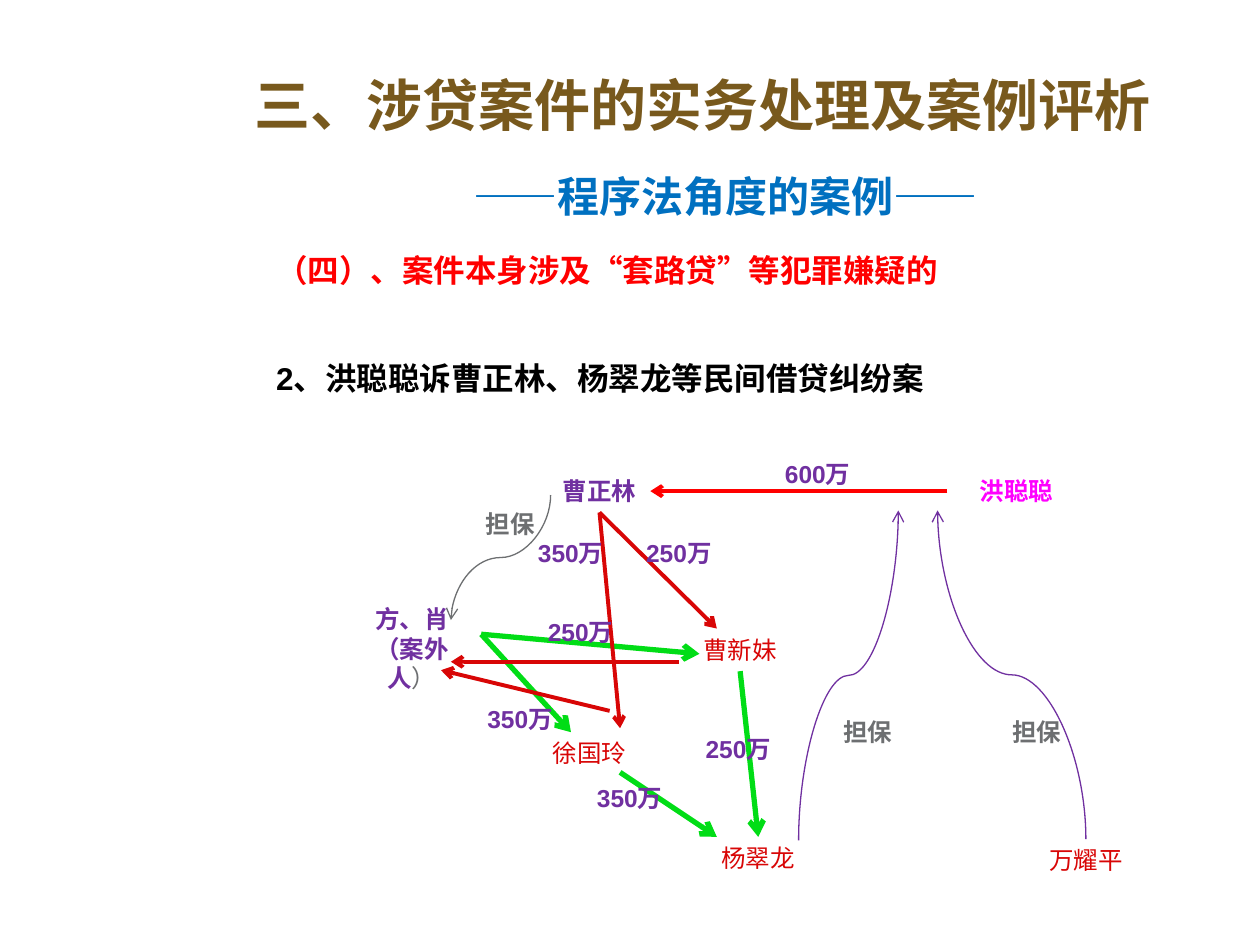
from collections import namedtuple

from lxml.etree import SubElement
from pptx import Presentation
from pptx.dml.color import RGBColor
from pptx.enum.shapes import MSO_CONNECTOR
from pptx.enum.text import MSO_ANCHOR, MSO_AUTO_SIZE, PP_ALIGN
from pptx.oxml.ns import qn
from pptx.util import Cm, Pt

BROWN = RGBColor(0x78, 0x59, 0x1D)
BLUE = RGBColor(0x00, 0x70, 0xC0)
RED = RGBColor(0xFF, 0x00, 0x00)
DARK_RED = RGBColor(0xD8, 0x06, 0x06)
BLACK = RGBColor(0x00, 0x00, 0x00)
PURPLE = RGBColor(0x70, 0x30, 0xA0)
MAGENTA = RGBColor(0xFF, 0x00, 0xFF)
GREEN = RGBColor(0x01, 0xDD, 0x16)
GREY = RGBColor(0x6D, 0x6F, 0x71)

TOP, LEFT, BOTTOM, RIGHT = range(4)
Site = namedtuple("Site", "party side")


class CaseSlide:
    font_name = "Arial"
    label_width, label_height = 2.79, 0.86

    def __init__(self, presentation):
        self.slide = presentation.slides.add_slide(presentation.slide_layouts[1])

    def fill_frame(self, frame, paragraphs, size, anchor=MSO_ANCHOR.TOP, **paragraph_format):
        """Fill a frame with paragraphs, each a list of (text, colour, bold) runs."""
        frame_format = {"word_wrap": True, "auto_size": MSO_AUTO_SIZE.NONE,
                        "vertical_anchor": anchor}
        for key, value in frame_format.items():
            setattr(frame, key, value)
        for index, runs in enumerate(paragraphs):
            paragraph = frame.add_paragraph() if index else frame.paragraphs[0]
            for key, value in paragraph_format.items():
                setattr(paragraph, key, value)
            for text, colour, bold in runs:
                run = paragraph.add_run()
                run.text = text
                font_format = {"name": self.font_name, "size": Pt(size), "bold": bold}
                for key, value in font_format.items():
                    setattr(run.font, key, value)
                run.font.color.rgb = colour

    def place(self, shape, left, top, width, height):
        box = {"left": left, "top": top, "width": width, "height": height}
        for key, value in box.items():
            setattr(shape, key, Cm(value))

    def title(self, text):
        title = self.slide.shapes.title
        self.place(title, 4.88, 1.24, 19.76, 1.68)
        self.fill_frame(title.text_frame, [[(text, BROWN, True)]], 32, MSO_ANCHOR.BOTTOM,
                        alignment=PP_ALIGN.LEFT, line_spacing=0.9)

    def headings(self, lines):
        body = self.slide.placeholders[1]
        self.place(body, 5.31, 4.93, 19.2, 4.88)
        self.fill_frame(body.text_frame, [[(text, colour, True)] for text, colour in lines], 18)
        for index, paragraph in enumerate(body.text_frame.paragraphs):
            paragraph.space_before = Pt(40 if index else 0)
            properties = paragraph._p.get_or_add_pPr()
            properties.set("marL", "0")
            properties.set("indent", "0")
            SubElement(properties, qn("a:buNone"))

    def text(self, paragraphs, left, top, width=label_width, height=label_height,
             size=14, anchor=MSO_ANCHOR.TOP):
        box = self.slide.shapes.add_textbox(Cm(left), Cm(top), Cm(width), Cm(height))
        self.fill_frame(box.text_frame, paragraphs, size, anchor, alignment=PP_ALIGN.CENTER)
        return box

    def label(self, text, left, top, colour=PURPLE, bold=True, **box):
        return self.text([[(text, colour, bold)]], left, top, **box)

    def style_arrow(self, connector, colour, weight):
        connector.line.color.rgb = colour
        connector.line.width = Pt(weight)
        properties = connector._element.spPr
        SubElement(properties.find(qn("a:ln")), qn("a:tailEnd"), type="arrow")
        SubElement(properties, qn("a:effectLst"))

    def arrow(self, begin, end, colour, weight):
        """Draw a straight arrow between points or connection sites."""
        (x1, y1), (x2, y2) = [(0, 0) if isinstance(spot, Site) else spot
                              for spot in (begin, end)]
        connector = self.slide.shapes.add_connector(
            MSO_CONNECTOR.STRAIGHT, Cm(x1), Cm(y1), Cm(x2), Cm(y2))
        if isinstance(begin, Site):
            connector.begin_connect(*begin)
        if isinstance(end, Site):
            connector.end_connect(*end)
        self.style_arrow(connector, colour, weight)

    def curve(self, begin, end, colour):
        """Draw an S-curve that leaves and arrives vertically, as a turned connector."""
        (x1, y1), (x2, y2) = begin, end
        upward = y2 < y1
        middle_x, middle_y = (x1 + x2) / 2, (y1 + y2) / 2
        run = abs(y2 - y1) / 2
        rise = (x2 - x1) / 2 if upward else (x1 - x2) / 2
        connector = self.slide.shapes.add_connector(
            MSO_CONNECTOR.CURVE, Cm(middle_x - run), Cm(middle_y - rise),
            Cm(middle_x + run), Cm(middle_y + rise))
        degrees = 270 if upward else 90
        connector._element.spPr.find(qn("a:xfrm")).set("rot", str(degrees * 60000))
        self.style_arrow(connector, colour, 0.75)


def main():
    presentation = Presentation()
    presentation.slide_width, presentation.slide_height = Cm(25.4), Cm(19.05)
    case = CaseSlide(presentation)

    case.title("三、涉贷案件的实务处理及案例评析")
    case.label("——程序法角度的案例——", 4.75, 2.9, BLUE, width=19.76, height=1.68,
               size=24, anchor=MSO_ANCHOR.BOTTOM)
    case.headings([("（四）、案件本身涉及“套路贷”等犯罪嫌疑的", RED),
                   ("2、洪聪聪诉曹正林、杨翠龙等民间借贷纠纷案", BLACK)])

    outsiders = case.text([[("方、肖", PURPLE, True)],
                           [("（案外人", PURPLE, True), ("）", GREY, False)]],
                          6.91, 12.06, height=1.45)
    borrower = case.label("曹正林", 10.69, 9.47)
    lender = case.label("洪聪聪", 19.1, 9.47, MAGENTA)
    sister = case.label("曹新妹", 13.74, 12.67, DARK_RED, False, width=2.36)
    case.label("徐国玲", 10.49, 14.76, DARK_RED, False)
    guarantor = case.label("杨翠龙", 13.89, 16.87, DARK_RED, False)
    case.label("万耀平", 20.5, 16.92, DARK_RED, False)

    for begin, end, colour, weight in [
        (Site(outsiders, RIGHT), (14.1, 13.18), GREEN, 3),
        (Site(outsiders, RIGHT), (11.51, 14.76), GREEN, 3),
        ((12.5, 15.57), (14.45, 16.87), GREEN, 3),
        (Site(sister, BOTTOM), Site(guarantor, TOP), GREEN, 3),
        (Site(lender, LEFT), (13.11, 9.9), RED, 2.25),
        (Site(borrower, BOTTOM), (14.45, 12.67), DARK_RED, 2.25),
        (Site(borrower, BOTTOM), (12.5, 14.68), DARK_RED, 2.25),
        ((12.29, 14.33), (8.89, 13.51), DARK_RED, 2.25),
        ((13.69, 13.34), (9.09, 13.34), DARK_RED, 2.25),
    ]:
        case.arrow(begin, end, colour, weight)

    for begin, end, colour in [
        ((16.1, 16.94), (18.11, 10.29), PURPLE),
        ((21.89, 16.92), (18.9, 10.29), PURPLE),
        ((11.1, 9.98), (9.09, 12.5), GREY),
    ]:
        case.curve(begin, end, colour)

    for amount, left, top in [
        ("600万", 15.09, 9.12),
        ("350万", 10.11, 10.72),
        ("250万", 12.29, 10.72),
        ("250万", 10.31, 12.32),
        ("350万", 9.09, 14.07),
        ("250万", 13.49, 14.68),
        ("350万", 11.3, 15.67),
    ]:
        case.label(amount, left, top)
    for left, top in [(8.89, 10.13), (16.1, 14.33), (19.51, 14.33)]:
        case.label("担保", left, top, GREY)

    presentation.save("out.pptx")


if __name__ == "__main__":
    main()
